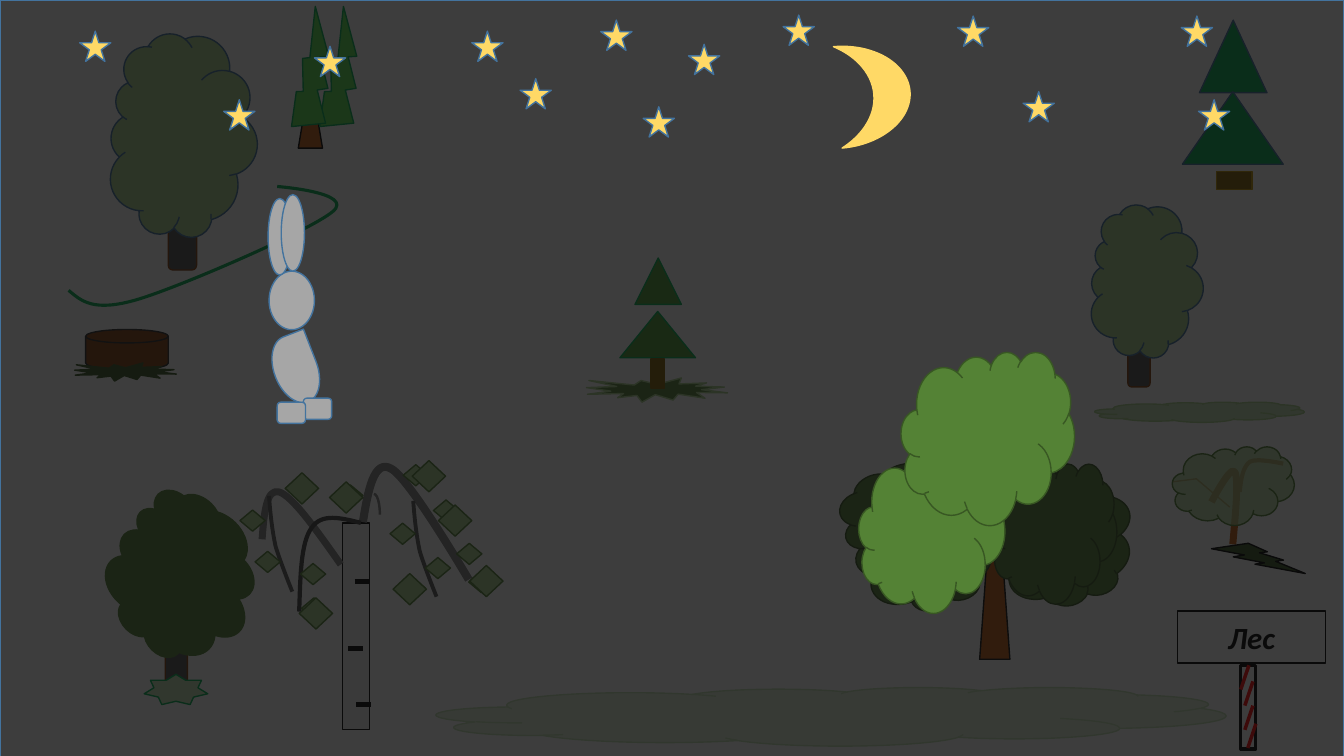
from dataclasses import dataclass

from lxml import etree
from pptx import Presentation
from pptx.dml.color import RGBColor
from pptx.enum.shapes import MSO_CONNECTOR, MSO_SHAPE
from pptx.enum.text import MSO_ANCHOR, PP_ALIGN
from pptx.oxml.ns import qn
from pptx.util import Pt

STRAIGHT = MSO_CONNECTOR.STRAIGHT
CLOUD, ARC, MOON, TEAR = MSO_SHAPE.CLOUD, MSO_SHAPE.ARC, MSO_SHAPE.MOON, MSO_SHAPE.TEAR
RECT, ROUNDED, OVAL = MSO_SHAPE.RECTANGLE, MSO_SHAPE.ROUNDED_RECTANGLE, MSO_SHAPE.OVAL
TRIANGLE, TRAPEZOID = MSO_SHAPE.ISOSCELES_TRIANGLE, MSO_SHAPE.TRAPEZOID
EXTRACT, DISK = MSO_SHAPE.FLOWCHART_EXTRACT, MSO_SHAPE.FLOWCHART_MAGNETIC_DISK
DECISION, DIAMOND = MSO_SHAPE.FLOWCHART_DECISION, MSO_SHAPE.DIAMOND
BURST, BOLT = MSO_SHAPE.EXPLOSION1, MSO_SHAPE.LIGHTNING_BOLT
STAR5, STAR7 = MSO_SHAPE.STAR_5_POINT, MSO_SHAPE.STAR_7_POINT
CENTER, MIDDLE = PP_ALIGN.CENTER, MSO_ANCHOR.MIDDLE


@dataclass(frozen=True)
class Theme:
    black: str = "000000"
    white: str = "FFFFFF"
    night: str = "0D0D0D"
    outline: str = "43739E"
    charcoal: str = "262626"
    soot: str = "404040"
    bark: str = "525252"
    twig: str = "595959"
    branch: str = "808080"
    birch: str = "F2F2F2"
    fur: str = "A6A6A6"
    brown: str = "843C0B"
    rust: str = "C55A11"
    olive: str = "806000"
    ochre: str = "BF9000"
    gold: str = "FFD966"
    red: str = "FF0000"
    mist: str = "E2F0D9"
    pale: str = "C5E0B4"
    leaf: str = "A9D18E"
    forest: str = "548235"
    deep: str = "385723"
    fir: str = "00B050"
    neon: str = "54E34D"
    needle: str = "4C9C30"
    font: str = "Calibri"
    sign_size: int = 22


T = Theme()


class Region:
    """A part of the scene; its contents are placed from its top left corner, in points."""

    def __init__(self, shapes, left=0, top=0):
        self.shapes, self.left, self.top = shapes, left, top

    def at(self, x, y):
        return Pt(self.left + x), Pt(self.top + y)

    def add(self, preset, box, fill, line, weight=1, rotation=0, opacity=100):
        x, y, width, height = box
        shape = self.shapes.add_shape(preset, *self.at(x, y), Pt(width), Pt(height))
        shape.rotation = rotation
        paint(shape, fill, line, weight)
        if opacity < 100:
            color = shape._element.spPr.find(qn("a:solidFill"))[0]
            etree.SubElement(color, qn("a:alpha"), val=str(opacity * 1000))
        return shape

    def polyline(self, points, line, weight):
        start, *rest = [self.at(x, y) for x, y in points]
        builder = self.shapes.build_freeform(*start)
        builder.add_line_segments(rest, close=False)
        outline = builder.convert_to_shape()
        paint(outline, None, line, weight)
        return outline

    def curve(self, points, line, weight, rotation=0):
        """Draw cubic Bezier arcs: a start point, then two controls and an end for each arc."""
        outline = self.polyline(points[::3], line, weight)
        segments = outline._element.spPr.findall(".//" + qn("a:lnTo"))
        for index, segment in enumerate(segments):
            segment.tag = qn("a:cubicBezTo")
            controls = points[3 * index + 1:3 * index + 3]
            for position, control in enumerate(controls):
                x, y = self.at(*control)
                segment.insert(position, etree.Element(
                    qn("a:pt"), x=str(x - outline.left), y=str(y - outline.top)))
        outline.rotation = rotation

    def stroke(self, x, y, dx, dy, line, weight):
        stroke = self.shapes.add_connector(STRAIGHT, *self.at(x, y), *self.at(x + dx, y + dy))
        stroke.line.color.rgb = RGBColor.from_string(line)
        stroke.line.width = Pt(weight)
        etree.SubElement(stroke._element.spPr, qn("a:effectLst"))


def paint(shape, fill, line, weight):
    shape.shadow.inherit = False
    if fill:
        shape.fill.solid()
        shape.fill.fore_color.rgb = RGBColor.from_string(fill)
    else:
        shape.fill.background()
    shape.line.color.rgb = RGBColor.from_string(line)
    shape.line.width = Pt(weight)


def round_tree(area, trunk, crown, rotation=283.9, fill=T.leaf, line=T.outline):
    area.add(ROUNDED, trunk, T.bark, T.brown)
    area.add(CLOUD, crown, fill, line, rotation=rotation)


def birch(area):
    area.add(RECT, (72.8, 43.7, 19.4, 147.6), T.birch, T.black)
    for x, y in ((81.4, 85.4), (76.4, 133), (82.2, 173.3)):
        area.stroke(x, y, 10.8, 0, T.black, 3.5)
    area.curve([(87.2, 43), (90.8, 20.6), (95.1, -2.4), (107.4, 4.8),
                (120.3, 11.3), (162.8, 84), (162.8, 84)], T.branch, 5.75)
    area.curve([(71.4, 73.2), (54.1, 48.7), (36.8, 24.2), (27.4, 21.4),
                (18.1, 18.5), (16.6, 37.2), (15.2, 55.2)], T.branch, 5)
    area.add(ARC, (90.8, 22.8, 8.6, 29.5), None, T.branch, 1.75)
    hanging = [(0, 0), (0.9, 12.2), (2.2, 24.5), (4.7, 36), (7.9, 46.8), (16.6, 68.4), (16.6, 68.4)]
    for x, y in ((123.2, 27.8), (20.2, 24.2)):
        area.curve([(x + dx, y + dy) for dx, dy in hanging], T.twig, 2.75)
    area.curve([(77.7, 38.5), (62.9, 38.4), (48.7, 38.2), (44.3, 50.4),
                (39.2, 62.8), (45, 86.6), (50, 110.5)], T.soot, 3, rotation=13.8)
    small_leaves = ((154.2, 58.1), (162.8, 78.2), (113.8, 82.6), (131.8, 68.2), (106.6, 43.7),
                    (137.6, 27.1), (116, 1.9), (69.2, 16.3), (43.3, 97), (42.6, 72.5),
                    (31.8, 11.3), (-0.6, 34.3), (10.2, 63.8))
    large_leaves = ((122.5, -1), (141.2, 30.7), (163.5, 73.9), (41.8, 97),
                    (31.8, 7.7), (63.4, 14.2), (108.8, 79.7))
    for preset, spots, size in ((DECISION, small_leaves, (18, 15.1)),
                                (DIAMOND, large_leaves, (23.8, 22.3))):
        for spot in spots:
            area.add(preset, spot + size, T.leaf, T.forest)


def stump(area):
    area.add(DISK, (8.2, 0.4, 59, 28.8), T.brown, T.charcoal)
    area.add(BURST, (0.3, 24.2, 72.7, 13), T.deep, T.deep)


def oak_in_shade(area):
    area.add(TRIANGLE, (99.8, 71.1, 21.6, 149.8), T.rust, T.night)
    for x, y, rotation in ((56.6, 9.2, 0), (4.1, 81.2, 256.1), (102.7, 77.6, 256.1)):
        area.add(CLOUD, (x, y, 106.6, 104.4), T.forest, T.deep, rotation=rotation)
    area.add(CLOUD, (108.5, 81.2, 89.3, 100.1), T.forest, T.deep)


def oak_in_moonlight(area):
    for crown in ((13.4, 74, 104.4, 113.8), (43.7, 1.3, 123.8, 123.8)):
        area.add(CLOUD, crown, T.forest, T.deep)


def tall_fir(area):
    for tier in ((12.8, 0.4, 48.2, 51.8), (0.6, 51.5, 72, 51.8)):
        area.add(TRIANGLE, tier, T.fir, T.outline)
    area.add(RECT, (25, 108.4, 25.2, 13), T.olive, T.ochre)


def small_fir(area):
    area.add(BURST, (1, 86, 100.8, 17.3), T.forest, T.leaf)
    for tier in ((35.6, 0.3, 33.1, 33.1), (24.8, 38.5, 54, 33.1)):
        area.add(EXTRACT, tier, T.needle, T.fir)
    area.add(RECT, (47.1, 72.3, 9.4, 20.9), T.olive, T.olive)


def ragged_fir(area):
    area.add(TRAPEZOID, (13.1, 68.9, 17.3, 25.9), T.rust, T.black)
    for x in (20.3, 0.2):
        area.add(BOLT, (x, 0.5, 49.7, 82.1), T.neon, T.fir, rotation=211.4)


def bush(area):
    area.curve([(43.6, 69.8), (45.7, 46.8), (47.9, 23), (45, 18),
                (42.1, 12.9), (28.4, 39.6), (28.4, 39.6)], T.rust, 5)
    area.curve([(48.6, 32.4), (49.3, 23.7), (50.8, 14.4), (55.8, 10.8),
                (60.8, 7.9), (79.6, 12.2), (79.6, 12.2)], T.rust, 3)
    area.polyline([(41.4, 43.2), (17.6, 23), (0.4, 25.2)], T.rust, 1)
    area.add(CLOUD, (0.4, 0, 87.1, 56.2), T.leaf, T.forest, opacity=73)
    area.add(BOLT, (28.4, 69.1, 67, 21.6), T.deep, T.black)


def trail(area):
    area.curve([(1, 74.4), (10.3, 82.3), (19, 90.2), (50.6, 80.8), (81.6, 71.5), (173, 31.9),
                (189.6, 18.2), (206.2, 4.5), (150, 0.2), (150, 0.2)], T.fir, 2.25)


def forest_sign(area):
    area.add(RECT, (45.3, 39.2, 10.8, 59.8), T.white, T.black, 2.25)
    board = area.add(RECT, (0, 0.3, 105.8, 37.4), None, T.black)
    board.text_frame.text = "Лес"
    board.text_frame.vertical_anchor = MIDDLE
    caption = board.text_frame.paragraphs[0]
    caption.alignment = CENTER
    font = caption.runs[0].font
    font.name, font.size, font.bold, font.italic = T.font, Pt(T.sign_size), True, True
    font.color.rgb = RGBColor.from_string(T.black)
    for x, y in ((51.1, 39.2), (54, 50.7), (54, 68), (56.1, 81)):
        area.stroke(x, y, -5.8, 17.3, T.red, 2.5)


def night_sky(area):
    for spot in ((429.1, 14.4), (491.8, 31.7), (337, 22.3), (684, 11.5), (559.4, 10.8),
                 (843.8, 11.5), (730.8, 65.5), (371.5, 56.2), (459.4, 76.3), (856.1, 71.3),
                 (224.6, 33.1), (56.9, 22.3), (159.8, 71.3)):
        area.add(STAR5, spot + (22.3, 21.6), T.gold, T.outline)


def rabbit(area):
    head, left_ear, right_ear = (1.2, 55.7, 32.4, 41.8), (0.5, 3.8, 16.6, 54.7), (9.9, 1, 16.6, 54.7)
    for part in (head, left_ear, right_ear):
        area.add(OVAL, part, T.fur, T.outline)
    area.add(TEAR, (4.8, 101, 31, 49.7), T.fur, T.outline, rotation=338.8)
    for x, y in ((25.7, 146.4), (7, 149.3)):
        area.add(ROUNDED, (x, y, 20.2, 15.1), T.fur, T.outline)


def main():
    deck = Presentation()
    deck.slide_width, deck.slide_height = Pt(960), Pt(540)
    shapes = deck.slides.add_slide(deck.slide_layouts[6]).shapes
    scene = Region(shapes)
    round_tree(Region(shapes, 58, 43), (62.2, 66.4, 20.2, 83.5), (0.3, 0.9, 144.7, 106.6))
    round_tree(Region(shapes, 764, 160), (41.7, 53.8, 15.8, 62.6), (0.6, 0.6, 108.7, 81.4))
    round_tree(Region(shapes, 76, 357), (42.1, 70.7, 15.8, 62.6), (0.3, 0.8, 108.7, 110.2),
               314.8, T.forest, T.forest)
    birch(Region(shapes, 172, 330))
    scene.add(STAR7, (103, 481.7, 45.4, 21.6), T.pale, T.fir)
    stump(Region(shapes, 53, 235))
    oak_in_shade(Region(shapes, 600, 250))
    tall_fir(Region(shapes, 844, 14))
    scene.add(CLOUD, (311.8, 491, 563.8, 41.8), T.mist, T.pale)
    scene.add(CLOUD, (781.9, 287.3, 149.8, 14.4), T.pale, T.leaf)
    bush(Region(shapes, 837, 319))
    ragged_fir(Region(shapes, 200, 11))
    trail(Region(shapes, 48, 133))
    forest_sign(Region(shapes, 841, 436))
    small_fir(Region(shapes, 418, 184))
    scene.add(RECT, (0, 0, 960, 543.6), T.night, T.outline, opacity=80)
    night_sky(scene)
    rabbit(Region(shapes, 191, 138))
    oak_in_moonlight(Region(shapes, 600, 250))
    scene.add(MOON, (598.3, 31, 51.8, 72.7), T.gold, T.gold, rotation=175.1)
    deck.save("out.pptx")


if __name__ == "__main__":
    main()
